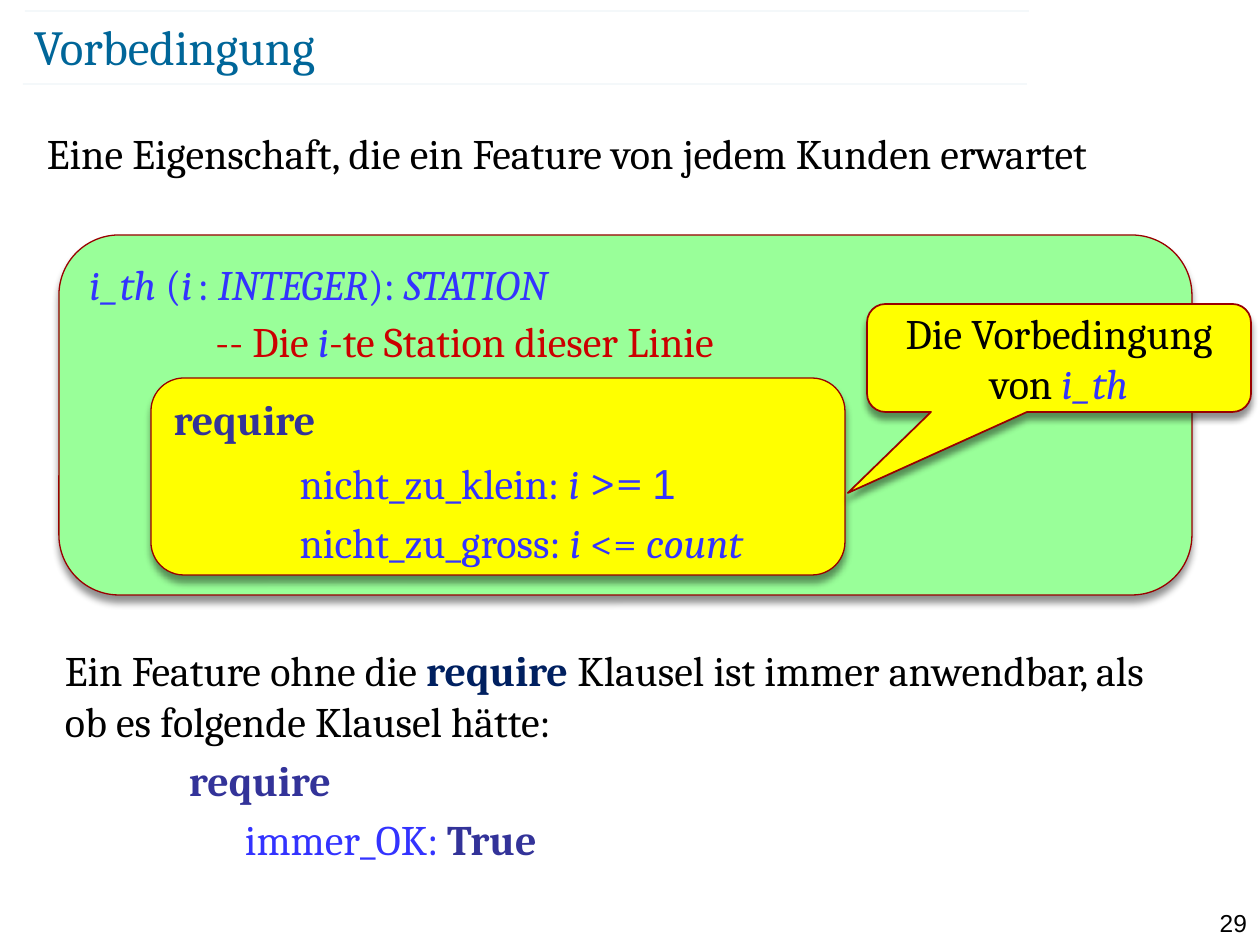
from dataclasses import dataclass

from lxml import etree
from pptx import Presentation
from pptx.dml.color import RGBColor
from pptx.enum.shapes import MSO_CONNECTOR, MSO_SHAPE
from pptx.enum.text import MSO_ANCHOR, PP_ALIGN
from pptx.oxml.ns import qn
from pptx.util import Emu, Pt

EMU_PER_PX = 914400 / 126

BLACK = RGBColor(0x00, 0x00, 0x00)
TEAL = RGBColor(0x00, 0x66, 0x99)
NAVY = RGBColor(0x00, 0x20, 0x60)
INDIGO = RGBColor(0x33, 0x33, 0x99)
BLUE = RGBColor(0x33, 0x33, 0xFF)
RED = RGBColor(0xCC, 0x00, 0x00)
DARK_RED = RGBColor(0x99, 0x00, 0x00)
GREEN = RGBColor(0x99, 0xFF, 0x99)
YELLOW = RGBColor(0xFF, 0xFF, 0x00)

TOP, MIDDLE = MSO_ANCHOR.TOP, MSO_ANCHOR.MIDDLE
LEFT, CENTER, RIGHT = PP_ALIGN.LEFT, PP_ALIGN.CENTER, PP_ALIGN.RIGHT
ROUNDED = MSO_SHAPE.ROUNDED_RECTANGLE
CALLOUT = MSO_SHAPE.ROUNDED_RECTANGULAR_CALLOUT
STRAIGHT = MSO_CONNECTOR.STRAIGHT


@dataclass
class Box:
    left: int
    top: int
    width: int
    height: int


@dataclass
class Span:
    text: str
    color: RGBColor = BLACK
    italic: bool = False
    bold: bool = False
    size: int = 24
    font: str = "Cambria"


@dataclass
class Line:
    spans: list[Span]
    indent: int = 0


def px(value: int) -> Emu:
    return Emu(round(value * EMU_PER_PX))


def place(box: Box) -> tuple[Emu, Emu, Emu, Emu]:
    return px(box.left), px(box.top), px(box.width), px(box.height)


def write(shape, lines: list[Line], *, align=LEFT, anchor=TOP, gap: int = 4,
          side: int = 13, edge: int = 6) -> None:
    frame = shape.text_frame
    frame.word_wrap = True
    frame.vertical_anchor = anchor
    frame.margin_left = frame.margin_right = px(side)
    frame.margin_top = frame.margin_bottom = px(edge)
    for index, line in enumerate(lines):
        paragraph = frame.add_paragraph() if index else frame.paragraphs[0]
        paragraph.alignment = align
        if index:
            paragraph.space_before = Pt(gap)
        if line.indent:
            properties = paragraph._p.get_or_add_pPr()
            properties.set("marL", str(px(line.indent)))
            properties.set("indent", "0")
        for span in line.spans:
            run = paragraph.add_run()
            run.text = span.text
            run.font.name = span.font
            run.font.size = Pt(span.size)
            run.font.bold = span.bold
            run.font.italic = span.italic
            run.font.color.rgb = span.color


def add_text(slide, box: Box, lines: list[Line], **layout) -> None:
    write(slide.shapes.add_textbox(*place(box)), lines, **layout)


def add_shadow(shape) -> None:
    effects = etree.SubElement(shape._element.spPr, qn("a:effectLst"))
    shadow = etree.SubElement(effects, qn("a:outerShdw"), blurRad=str(Pt(4)),
                              dist=str(Pt(4)), dir="5400000", rotWithShape="0")
    color = etree.SubElement(shadow, qn("a:srgbClr"), val=str(BLACK))
    etree.SubElement(color, qn("a:alpha"), val="43000")


def add_panel(slide, kind, box: Box, fill: RGBColor, lines: list[Line], *,
              line_width: float = 0.75, adjustments: tuple = (), **layout) -> None:
    shape = slide.shapes.add_shape(kind, *place(box))
    for index, value in enumerate(adjustments):
        shape.adjustments[index] = value
    shape.fill.solid()
    shape.fill.fore_color.rgb = fill
    shape.line.color.rgb = DARK_RED
    shape.line.width = Pt(line_width)
    add_shadow(shape)
    write(shape, lines, **layout)


def add_rule(slide, left: int, top: int, length: int) -> None:
    rule = slide.shapes.add_connector(STRAIGHT, px(left), px(top),
                                      px(left + length), px(top))
    rule.line.color.rgb = TEAL
    rule.line.width = Pt(0.1)
    color = rule.line._ln.find(".//" + qn("a:srgbClr"))
    etree.SubElement(color, qn("a:alpha"), val="35000")
    etree.SubElement(rule._element.spPr, qn("a:effectLst"))


def main() -> None:
    presentation = Presentation()
    presentation.slide_width, presentation.slide_height = px(1260), px(945)
    slide = presentation.slides.add_slide(presentation.slide_layouts[6])

    # Page number and heading
    add_text(slide, Box(1191, 902, 69, 30),
             [Line([Span("29", size=14, font="Arial")])], align=RIGHT)
    add_rule(slide, 23, 84, 1004)
    add_rule(slide, 25, 11, 1004)
    add_text(slide, Box(34, 16, 1095, 60),
             [Line([Span("Vorbedingung", TEAL, size=28)])],
             anchor=MIDDLE, side=0, edge=0)

    # Definition
    add_text(slide, Box(34, 121, 1184, 777), [Line([
        Span("Eine Eigenschaft, die ein Feature von jedem Kunden erwartet")])])

    # Feature with its precondition
    add_panel(slide, ROUNDED, Box(59, 235, 1133, 360), GREEN, [
        Line([Span("i_th", BLUE, italic=True), Span(" (", BLUE),
              Span("i", BLUE, italic=True), Span(" ", BLUE, italic=True, size=14),
              Span(": ", BLUE), Span("INTEGER", BLUE, italic=True),
              Span("): ", BLUE), Span("STATION", BLUE, italic=True)]),
        Line([Span("-- Die ", RED), Span("i", BLUE, italic=True),
              Span("-te Station dieser Linie", RED)], indent=126),
    ])
    add_panel(slide, ROUNDED, Box(151, 378, 694, 197), YELLOW, [
        Line([Span("require", INDIGO, bold=True)]),
        Line([Span("nicht_zu_klein:", BLUE), Span(" i ", BLUE, italic=True),
              Span(">=", BLUE, size=28), Span(" ", BLUE),
              Span("1", BLUE, font="Arial")], indent=126),
        Line([Span("nicht_zu_gross:", BLUE), Span(" i ", BLUE, italic=True),
              Span("<= ", BLUE), Span("count", BLUE, italic=True)], indent=126),
    ])
    add_panel(slide, CALLOUT, Box(867, 304, 384, 108), YELLOW, [
        Line([Span("Die Vorbedingung von "), Span("i_th", BLUE, italic=True)]),
    ], line_width=1, adjustments=(-0.55, 1.25, 0.17),
        align=CENTER, anchor=MIDDLE, side=0)

    # Default precondition
    add_text(slide, Box(52, 639, 1147, 237), [
        Line([Span("Ein Feature ohne die "), Span("require", NAVY, bold=True),
              Span(" Klausel ist immer anwendbar, als ob es folgende Klausel hätte:")]),
        Line([Span("require", INDIGO, bold=True)], indent=124),
        Line([Span("immer_OK: ", BLUE), Span("True", INDIGO, bold=True)], indent=180),
    ], gap=5)

    presentation.save("out.pptx")


if __name__ == "__main__":
    main()
